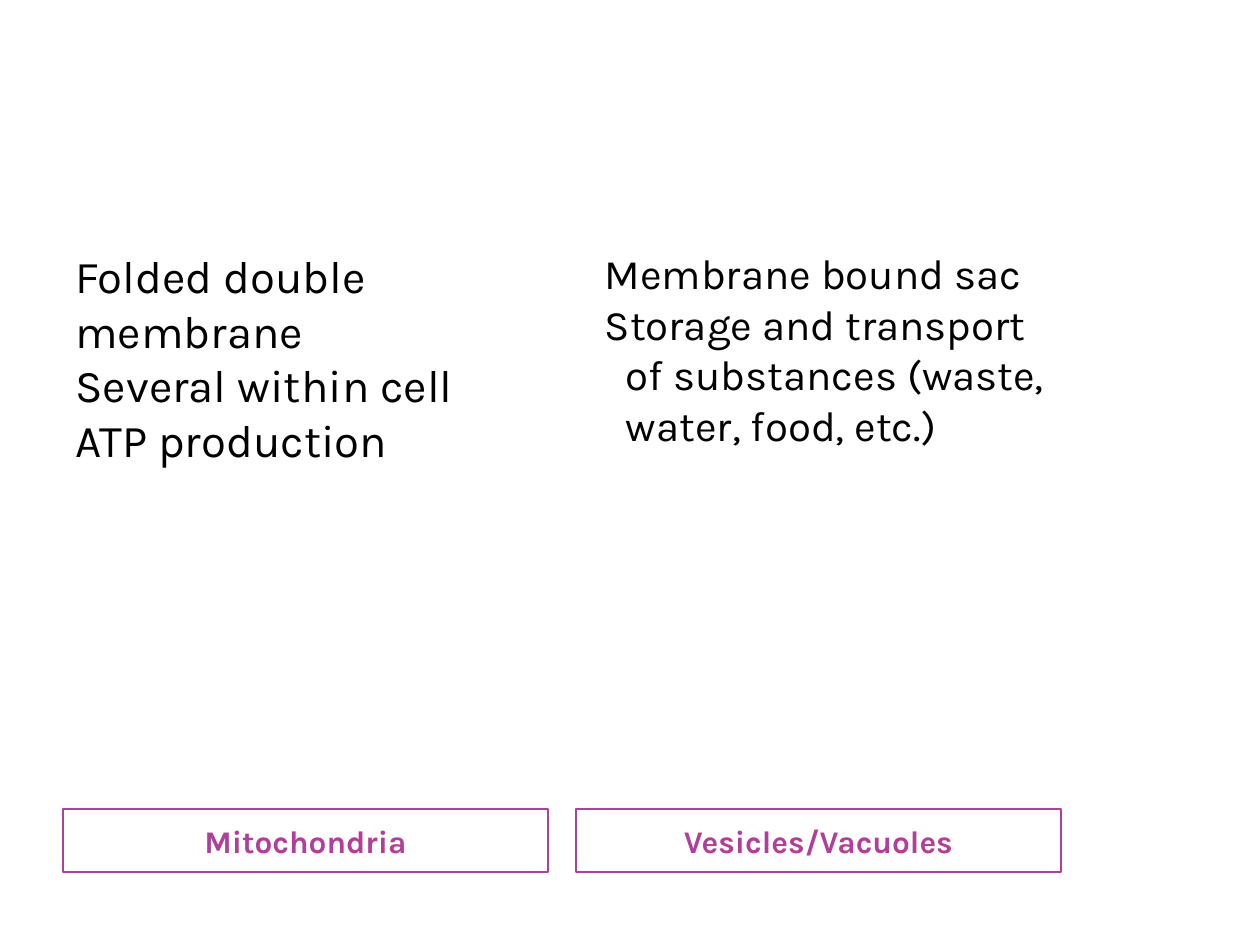
from dataclasses import dataclass
from pptx import Presentation
from pptx.dml.color import RGBColor
from pptx.enum.shapes import MSO_SHAPE
from pptx.enum.text import MSO_ANCHOR, PP_ALIGN
from pptx.util import Cm, Pt


@dataclass(frozen=True)
class Theme:
    face: str = "Karla"
    ink: str = "000000"
    pink: str = "B13F9A"
    label: int = 18


THEME = Theme()
WIDE = 9.78
LEFTS = (1.27, 11.61)
PAD = Cm(0.25)
CARDS = (
    ("Mitochondria", 26, 0, 0,
     ("Folded double membrane", "Several within cell", "ATP production")),
    ("Vesicles/Vacuoles", 24, 0.76, -0.43,
     ("Membrane bound sac",
      "Storage and transport of substances (waste, water, food, etc.)")),
)


def apply(item, values):
    for key, value in values.items():
        setattr(item, key, value)


def write(para, text, size, color, bold=False):
    run = para.add_run()
    run.text = text
    apply(run.font, {"name": THEME.face, "size": Pt(size), "bold": bold})
    run.font.color.rgb = RGBColor.from_string(color)


def setup(frame, anchor):
    apply(frame, {
        "word_wrap": True, "vertical_anchor": anchor,
        "margin_left": PAD, "margin_right": PAD,
        "margin_top": PAD, "margin_bottom": PAD,
    })


def add_label(slide, left, text):
    box = slide.shapes.add_shape(
        MSO_SHAPE.RECTANGLE, Cm(left), Cm(16.31), Cm(WIDE), Cm(1.27))
    box.shadow.inherit = False
    box.fill.background()
    box.line.color.rgb = RGBColor.from_string(THEME.pink)
    box.line.width = Pt(1)
    setup(box.text_frame, MSO_ANCHOR.MIDDLE)
    para = box.text_frame.paragraphs[0]
    para.alignment = PP_ALIGN.CENTER
    write(para, text, THEME.label, THEME.pink, True)


def add_facts(slide, left, lines, size, margin, indent):
    box = slide.shapes.add_textbox(
        Cm(left), Cm(4.75), Cm(WIDE), Cm(11.43))
    frame = box.text_frame
    setup(frame, MSO_ANCHOR.TOP)
    for spot, line in enumerate(lines):
        para = frame.add_paragraph() if spot else frame.paragraphs[0]
        props = para._p.get_or_add_pPr()
        props.set("marL", str(Cm(margin)))
        props.set("indent", str(Cm(indent)))
        write(para, line, size, THEME.ink)


def main():
    deck = Presentation()
    apply(deck, {"slide_width": Cm(25.4), "slide_height": Cm(19.05)})
    slide = deck.slides.add_slide(deck.slide_layouts[6])
    for left, (title, size, margin, indent, lines) in zip(LEFTS, CARDS):
        add_label(slide, left, title)
        add_facts(slide, left, lines, size, margin, indent)
    deck.save("out.pptx")


if __name__ == "__main__":
    main()
